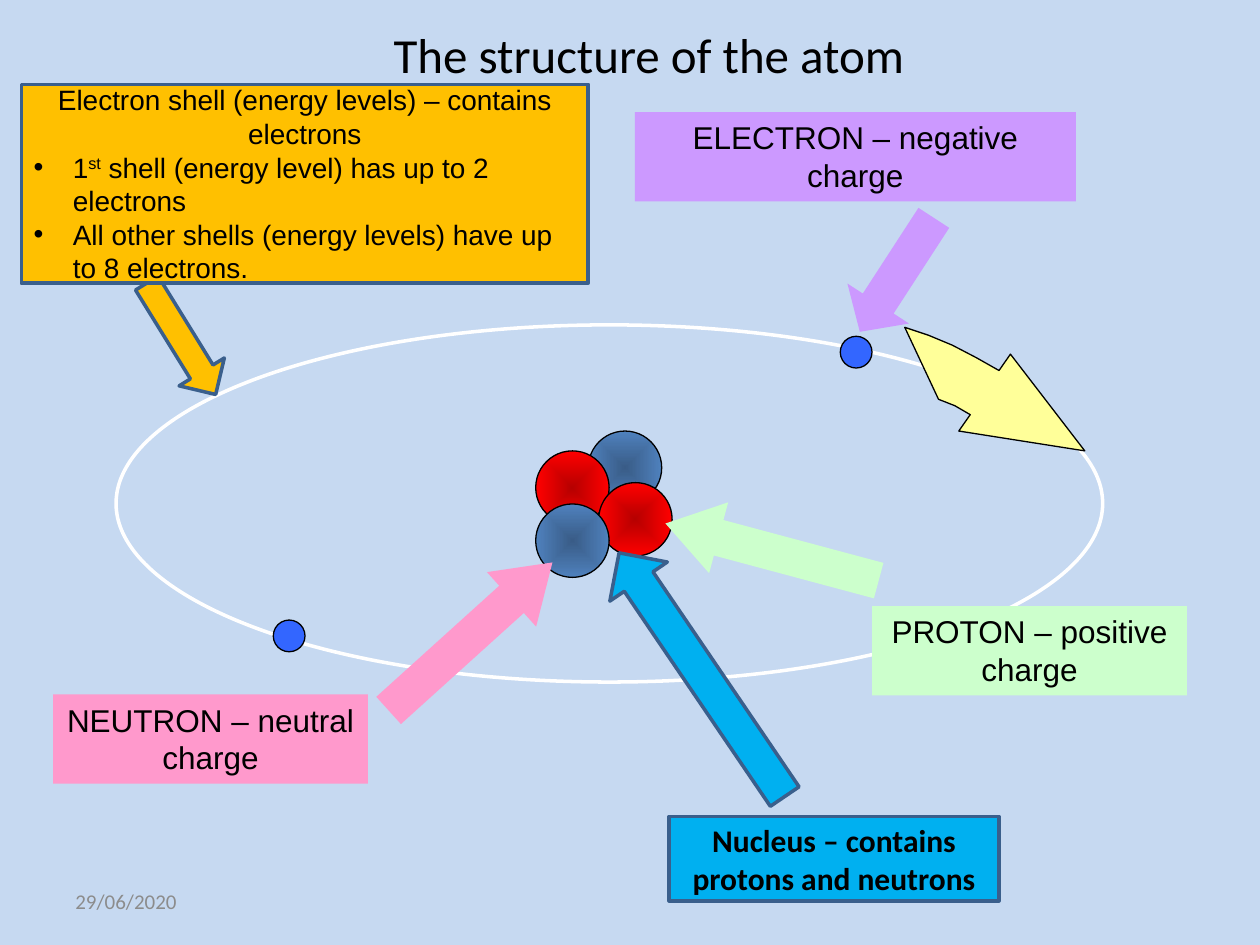
"""Build a slide showing the labelled structure of an atom."""
from dataclasses import dataclass

from lxml.etree import SubElement
from pptx import Presentation
from pptx.dml.color import RGBColor
from pptx.enum.shapes import MSO_SHAPE as Preset
from pptx.enum.text import MSO_ANCHOR as Anchor, PP_ALIGN as Align
from pptx.oxml.ns import qn
from pptx.util import Cm, Pt


@dataclass(frozen=True)
class Theme:
    background: str = "C6D9F1"
    black: str = "000000"
    grey: str = "8C8C8C"
    white: str = "FFFFFF"
    outline: str = "3A5F8C"
    electron: str = "3366FF"
    purple: str = "CC99FF"
    green: str = "CCFFCC"
    pink: str = "FF99CC"
    yellow: str = "FFFF99"
    orange: str = "FFC000"
    cyan: str = "00B0F0"
    proton_shades: tuple = ("B60000", "FF0000")
    neutron_shades: tuple = ("395C87", "4F81BD")
    title_size: int = 28
    label_size: int = 18
    shell_size: int = 16
    date_size: int = 12
    thin: float = 0.75
    thick: float = 2


theme = Theme()


def style(shape, fill=None, line=None, width=theme.thin, rotation=0):
    """Set fill, outline and rotation; a pair of colours shades from the centre."""
    shape.shadow.inherit = False
    shape.rotation = rotation
    if isinstance(fill, tuple):
        shape.fill.gradient()
        for stop, colour in zip(shape.fill.gradient_stops, fill):
            stop.color.rgb = RGBColor.from_string(colour)
        gradient = shape.element.spPr.find(qn("a:gradFill"))
        gradient.remove(gradient.find(qn("a:lin")))
        centre = SubElement(gradient, qn("a:path"), path="shape")
        SubElement(centre, qn("a:fillToRect"), l="50000", t="50000", r="50000", b="50000")
    elif fill:
        shape.fill.solid()
        shape.fill.fore_color.rgb = RGBColor.from_string(fill)
    else:
        shape.fill.background()
    if line:
        shape.line.color.rgb = RGBColor.from_string(line)
        shape.line.width = Pt(width)
    else:
        shape.line.fill.background()


def write(shape, *paragraphs, font="Arial", size=theme.label_size, colour=theme.black,
          bold=False, align=Align.CENTER, anchor=Anchor.MIDDLE):
    """Write paragraphs, each given as a list of runs, in one format."""
    frame = shape.text_frame
    frame.word_wrap = True
    frame.vertical_anchor = anchor
    for index, runs in enumerate(paragraphs):
        paragraph = frame.add_paragraph() if index else frame.paragraphs[0]
        paragraph.alignment = align
        for text in runs:
            run = paragraph.add_run()
            run.text = text
            run.font.name = font
            run.font.size = Pt(size)
            run.font.bold = bold
            run.font.color.rgb = RGBColor.from_string(colour)


presentation = Presentation()
presentation.slide_width, presentation.slide_height = Cm(25.4), Cm(19.05)
slide = presentation.slides.add_slide(presentation.slide_layouts[6])
slide.background.fill.solid()
slide.background.fill.fore_color.rgb = RGBColor.from_string(theme.background)
shapes = slide.shapes

date = shapes.add_textbox(Cm(1.27), Cm(17.65), Cm(5.92), Cm(1.02))
write(date, ["29/06/2020"], font="Calibri", size=theme.date_size, colour=theme.grey, align=Align.LEFT)
title = shapes.add_textbox(Cm(1.65), Cm(0.2), Cm(22.86), Cm(1.78))
write(title, ["The structure of the atom"], font="Calibri", size=theme.title_size)

nucleus = shapes.add_group_shape()
for left, top, shades in [
    (11.86, 8.69, theme.neutron_shades),
    (10.8, 9.09, theme.proton_shades),
    (12.07, 9.73, theme.proton_shades),
    (10.8, 10.16, theme.neutron_shades),
]:
    particle = nucleus.shapes.add_shape(Preset.OVAL, Cm(left), Cm(top), Cm(1.48), Cm(1.48))
    style(particle, shades, theme.black)

orbit = shapes.add_shape(Preset.OVAL, Cm(2.34), Cm(6.55), Cm(19.89), Cm(7.2))
style(orbit, line=theme.white, width=theme.thick)
for left, top in [(5.51, 12.5), (16.94, 6.78)]:
    electron = shapes.add_shape(Preset.OVAL, Cm(left), Cm(top), Cm(0.64), Cm(0.64))
    style(electron, theme.electron, theme.black)

motion_points = [
    (19.56, 8.36), (19.25, 8.18), (18.92, 8.05), (18.24, 6.6), (18.72, 6.76), (19.2, 6.96),
    (19.68, 7.21), (20.14, 7.47), (20.37, 7.14), (21.87, 9.09), (19.33, 8.69),
]
outline = [(Cm(x), Cm(y)) for x, y in motion_points]
builder = shapes.build_freeform(*outline[0])
builder.add_line_segments(outline[1:], close=True)
style(builder.convert_to_shape(), theme.yellow, theme.black)

for text, colour, label_box, arrow_box, rotation, head in [
    ("ELECTRON – negative charge", theme.purple,
     (12.8, 2.26, 8.89, 1.8), (16.71, 4.8, 2.74, 1.48), 303, 0.46),
    ("PROTON – positive charge", theme.green,
     (17.58, 12.22, 6.35, 1.8), (13.34, 10.39, 4.45, 1.48), 15, 0.75),
    ("NEUTRON – neutral charge", theme.pink,
     (1.07, 14, 6.35, 1.8), (7.26, 12.09, 4.45, 1.48), 137.9, 0.75),
]:
    group = shapes.add_group_shape()
    arrow = group.shapes.add_shape(Preset.LEFT_ARROW, *map(Cm, arrow_box))
    arrow.adjustments[1] = head
    style(arrow, colour, rotation=rotation)
    label = group.shapes.add_shape(Preset.RECTANGLE, *map(Cm, label_box))
    style(label, colour)
    write(label, [text], anchor=Anchor.TOP)

callouts = []
for colour, preset, arrow_box, rotation, label_box in [
    (theme.cyan, Preset.RIGHT_ARROW, (11.18, 12.9, 5.94, 1.4), 235.8, (13.49, 16.46, 6.65, 1.7)),
    (theme.orange, Preset.DOWN_ARROW, (3.12, 5.51, 1.07, 2.64), 328.3, (0.43, 1.7, 11.43, 4.01)),
]:
    arrow = shapes.add_shape(preset, *map(Cm, arrow_box))
    style(arrow, colour, theme.outline, theme.thick, rotation)
    callout = shapes.add_shape(Preset.RECTANGLE, *map(Cm, label_box))
    style(callout, colour, theme.outline, theme.thick)
    callouts.append(callout)

nucleus_label, shell_label = callouts
write(nucleus_label, ["Nucleus – contains protons and neutrons"], font="Calibri", bold=True)
write(
    shell_label,
    ["Electron shell (energy levels) – contains electrons"],
    ["1", "st", " shell (energy level) has up to 2 electrons"],
    ["All other shells (energy levels) have up to 8 electrons."],
    size=theme.shell_size,
)
rules = shell_label.text_frame.paragraphs[1:]
for paragraph in rules:
    paragraph.alignment = Align.LEFT
    properties = paragraph._p.get_or_add_pPr()
    properties.set("marL", str(Cm(0.79)))
    properties.set("indent", str(-Cm(0.79)))
    SubElement(properties, qn("a:buFont"), typeface="Arial")
    SubElement(properties, qn("a:buChar"), char="•")
rules[0].runs[1]._r.get_or_add_rPr().set("baseline", "30000")

presentation.save("out.pptx")
